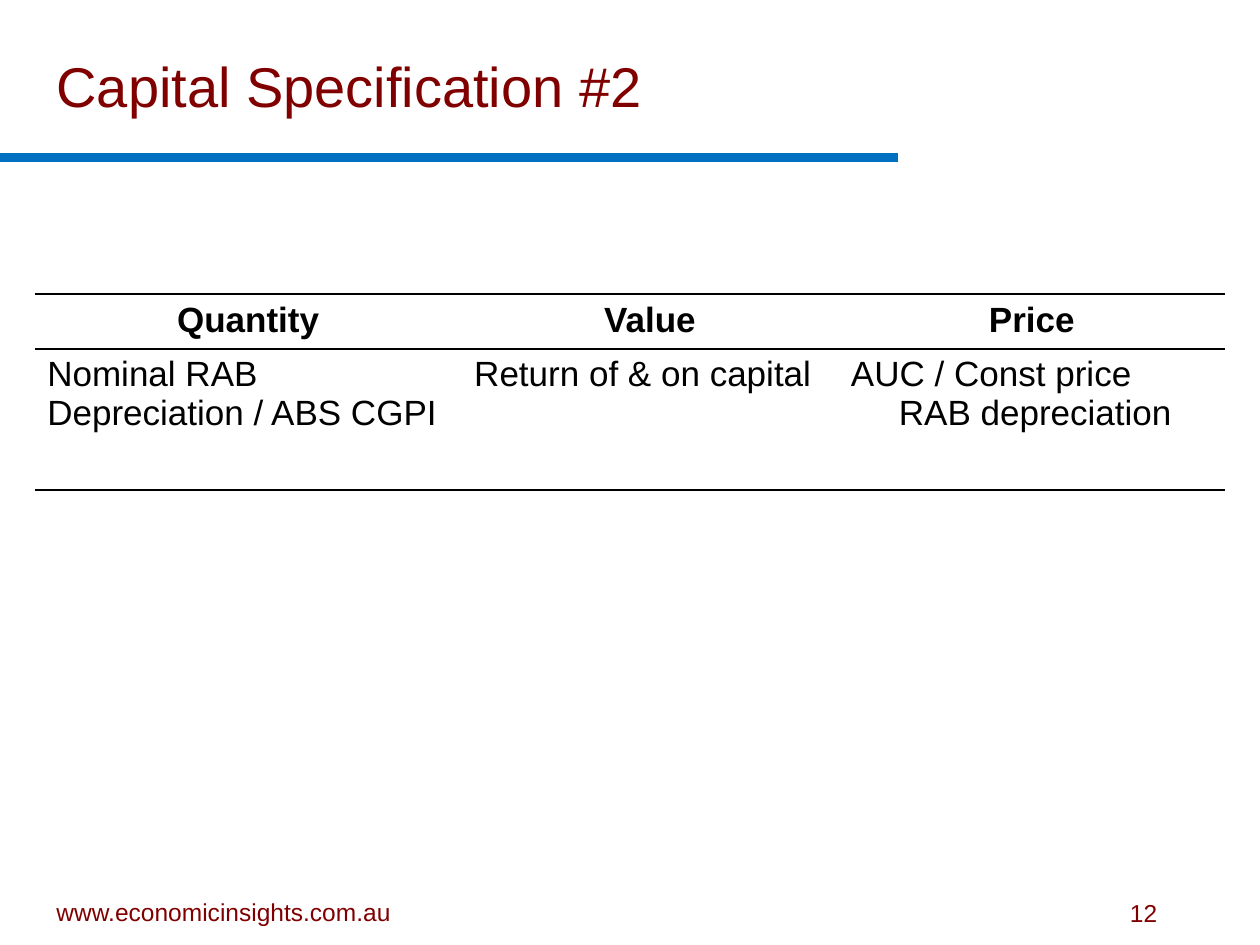
from dataclasses import dataclass

from lxml.etree import SubElement
from pptx import Presentation
from pptx.dml.color import RGBColor
from pptx.enum.shapes import MSO_CONNECTOR
from pptx.enum.text import MSO_ANCHOR, PP_ALIGN
from pptx.oxml.ns import qn
from pptx.util import Pt


@dataclass(frozen=True)
class Theme:
    font: str = "Arial"
    maroon: str = "800000"
    blue: str = "0070C0"
    black: str = "000000"
    title_size: int = 32
    table_size: int = 20
    footer_size: int = 14


THEME = Theme()
HANGING = 27.36
COLUMN_WIDTHS = (244, 215.3, 221)
ROW_HEIGHTS = (29.7, 80.7)
HEADINGS = ("Quantity", "Value", "Price")
DEFINITIONS = (
    ("Nominal RAB", "Depreciation / ABS CGPI"),
    ("Return of & on capital",),
    ("AUC / Const price RAB depreciation",),
)


def add_run(paragraph, text, size, color, bold=False):
    run = paragraph.add_run()
    run.text = text
    run.font.name = THEME.font
    run.font.size = Pt(size)
    run.font.bold = bold
    run.font.color.rgb = RGBColor.from_string(color)


def add_label(slide, text, box, size, align=PP_ALIGN.LEFT,
              anchor=MSO_ANCHOR.BOTTOM, wrap=True):
    frame = slide.shapes.add_textbox(*(Pt(n) for n in box)).text_frame
    frame.word_wrap = wrap
    frame.vertical_anchor = anchor
    frame.paragraphs[0].alignment = align
    add_run(frame.paragraphs[0], text, size, THEME.maroon)


def add_title_rule(slide):
    rule = slide.shapes.add_connector(
        MSO_CONNECTOR.STRAIGHT, Pt(0), Pt(90), Pt(513.2), Pt(90))
    rule.line.color.rgb = RGBColor.from_string(THEME.blue)
    rule.line.width = Pt(5)
    SubElement(rule._element.spPr, qn("a:effectLst"))


def rule_cell(cell):
    """Draw lines above and below the cell only, with no fill."""
    properties = cell._tc.get_or_add_tcPr()
    for side in ("L", "R", "T", "B"):
        ruled = side in "TB"
        border = SubElement(properties, qn(f"a:ln{side}"),
                            w=str(Pt(1.5) if ruled else 0))
        if ruled:
            fill = SubElement(border, qn("a:solidFill"))
            SubElement(fill, qn("a:srgbClr"), val=THEME.black)
        else:
            SubElement(border, qn("a:noFill"))
    cell.fill.background()


def fill_cell(cell, lines, heading=False):
    frame = cell.text_frame
    for index, line in enumerate(lines):
        paragraph = frame.add_paragraph() if index else frame.paragraphs[0]
        paragraph.alignment = PP_ALIGN.CENTER if heading else PP_ALIGN.LEFT
        properties = paragraph._p.get_or_add_pPr()
        properties.set("marL", str(Pt(HANGING)))
        properties.set("indent", str(-Pt(HANGING)))
        add_run(paragraph, line, THEME.table_size, THEME.black, heading)
    rule_cell(cell)


def add_capital_table(slide):
    table = slide.shapes.add_table(
        len(ROW_HEIGHTS), len(COLUMN_WIDTHS), Pt(19.8), Pt(168),
        Pt(sum(COLUMN_WIDTHS)), Pt(sum(ROW_HEIGHTS))).table
    table.first_row = table.horz_banding = False
    for row, height in zip(table.rows, ROW_HEIGHTS):
        row.height = Pt(height)
    for index, width in enumerate(COLUMN_WIDTHS):
        table.columns[index].width = Pt(width)
        fill_cell(table.cell(0, index), [HEADINGS[index]], heading=True)
        fill_cell(table.cell(1, index), DEFINITIONS[index])


def main():
    deck = Presentation()
    deck.slide_width, deck.slide_height = Pt(720), Pt(540)
    slide = deck.slides.add_slide(deck.slide_layouts[6])
    add_title_rule(slide)
    add_label(slide, "www.economicinsights.com.au", (14.4, 508.3, 226.8, 24.5),
              THEME.footer_size, align=PP_ALIGN.CENTER)
    add_label(slide, "12", (638.6, 509.8, 31.7, 23.8), THEME.footer_size,
              anchor=MSO_ANCHOR.TOP, wrap=False)
    add_label(slide, "Capital Specification #2", (25.2, 25.9, 487.4, 45.4),
              THEME.title_size)
    add_capital_table(slide)
    deck.save("out.pptx")


if __name__ == "__main__":
    main()
